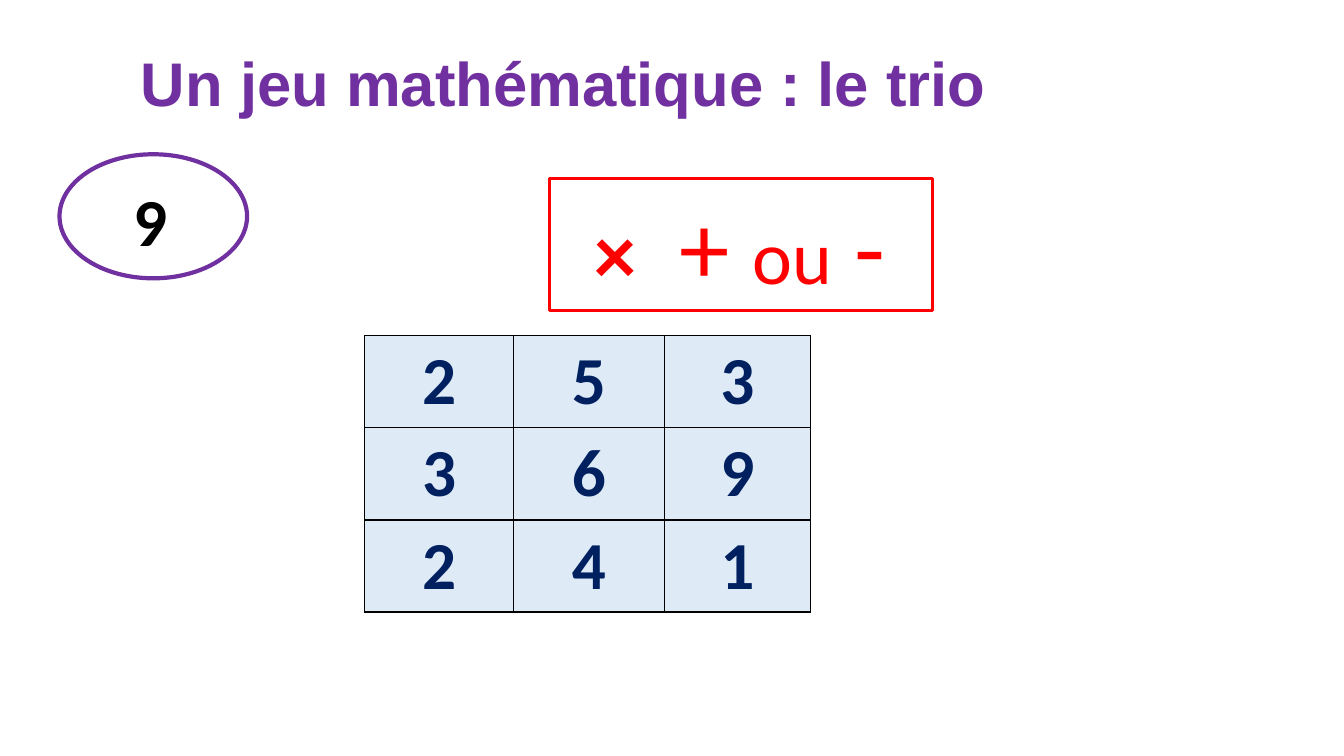
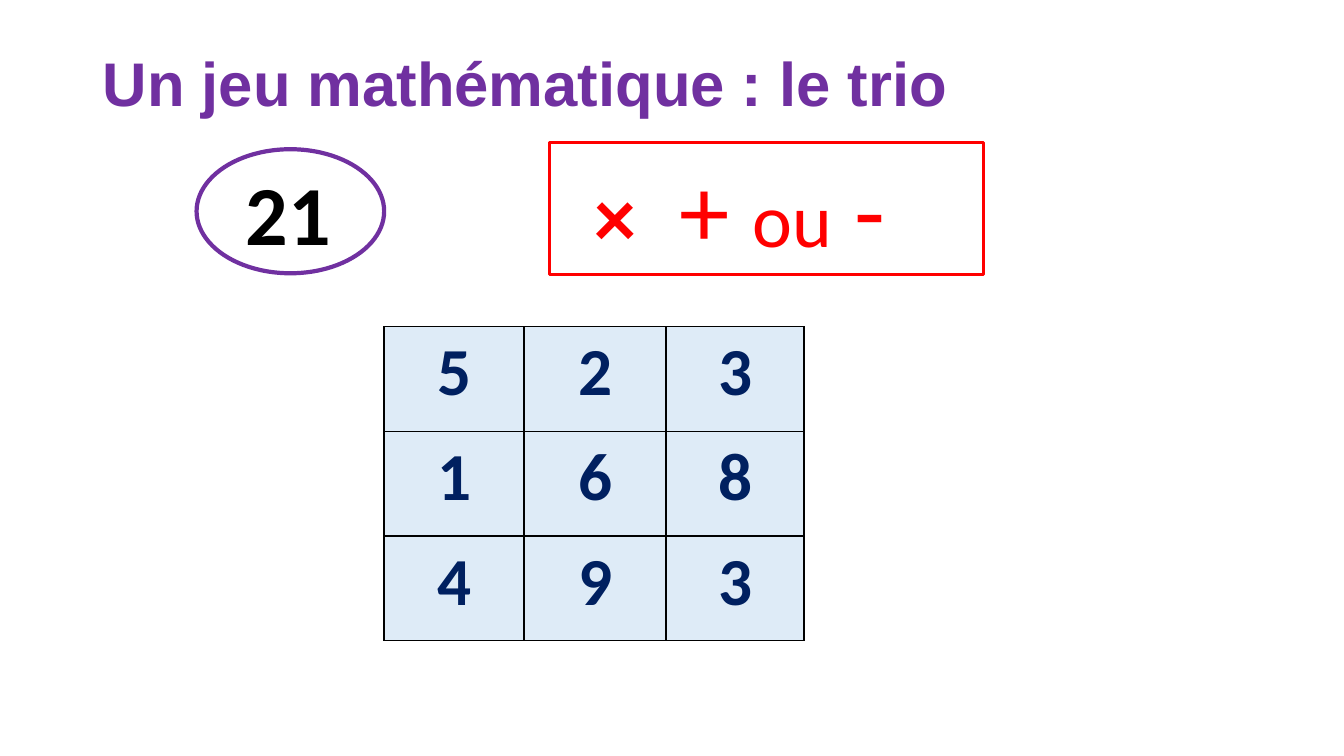
from lxml import etree
from pptx import Presentation
from pptx.dml.color import RGBColor
from pptx.enum.shapes import MSO_SHAPE
from pptx.enum.text import MSO_ANCHOR, MSO_AUTO_SIZE, PP_ALIGN
from pptx.oxml import parse_xml
from pptx.oxml.ns import qn
from pptx.util import Pt

OVAL, BOX = MSO_SHAPE.OVAL, MSO_SHAPE.RECTANGLE
CENTER, LEFT = PP_ALIGN.CENTER, PP_ALIGN.LEFT
TOP, MIDDLE = MSO_ANCHOR.TOP, MSO_ANCHOR.MIDDLE
GROW = MSO_AUTO_SIZE.SHAPE_TO_FIT_TEXT

PURPLE, RED, NAVY = "7030A0", "FF0000", "002060"
PALE_BLUE, BLACK, WHITE = "DEEBF7", "000000", "FFFFFF"

TITLE = "Un jeu mathématique : le trio"
OPERATORS = [("×", 60, True), ("\t+ ", 72, False), ("ou", 54, False), (" -", 72, False)]
BORDER = ('<a:{side} xmlns:a="http://schemas.openxmlformats.org/drawingml/2006/main" w="12700">'
          '<a:solidFill><a:srgbClr val="{color}"/></a:solidFill></a:{side}>')

# Positions are (left, top) or (left, top, width, height), in points
GAMES = [
    dict(title_left=93.6, target="9", target_size=48,
         oval=(42.5, 110.2), target_at=(88, 124.6, 90, 65.5),
         operators_at=(392.4, 127.4, 273.6, 94.3),
         grid_at=(260.6, 239.8), columns=(106, 108, 104.4), row=65.8,
         numbers=("253", "369", "241")),
    dict(title_left=66.2, target="21", target_size=60,
         oval=(140.4, 106.6), target_at=(168.4, 111.6, 110, 80),
         operators_at=(392.4, 101.5, 310.3, 94.3),
         grid_at=(274.3, 233.3), columns=(100, 101.5, 98.6), row=74.8,
         numbers=("523", "168", "493")),
]


def rgb(value):
    return RGBColor.from_string(value)


def write(frame, text, size, color, font="Calibri", bold=True, align=LEFT, anchor=TOP):
    """Append a formatted run to the first paragraph of a text frame."""
    frame.vertical_anchor = anchor
    paragraph = frame.paragraphs[0]
    paragraph.alignment = align
    run = paragraph.add_run()
    run.text = text
    run.font.size, run.font.name, run.font.bold = Pt(size), font, bold
    run.font.color.rgb = rgb(color)
    return paragraph


prs = Presentation()
prs.slide_width, prs.slide_height = Pt(960), Pt(540)

for game in GAMES:
    slide = prs.slides.add_slide(prs.slide_layouts[6])
    shapes = slide.shapes

    # Title
    title = shapes.add_textbox(Pt(game["title_left"]), Pt(9.4), Pt(828), Pt(104.4)).text_frame
    title.word_wrap = True
    write(title, TITLE, 44, PURPLE, font="Arial", anchor=MIDDLE).line_spacing = 0.9

    # Number grid
    columns, numbers = game["columns"], game["numbers"]
    left, top = game["grid_at"]
    grid = shapes.add_table(len(numbers), len(columns), Pt(left), Pt(top),
                            Pt(sum(columns)), Pt(game["row"] * len(numbers))).table
    for column, width in zip(grid.columns, columns):
        column.width = Pt(width)
    for row, digits in zip(grid.rows, numbers):
        row.height = Pt(game["row"])
        for cell, digit in zip(row.cells, digits):
            write(cell.text_frame, digit, 48, NAVY, align=CENTER)
            cell.fill.solid()
            cell.fill.fore_color.rgb = rgb(PALE_BLUE)
            properties = cell._tc.get_or_add_tcPr()
            for index, side in enumerate(("lnL", "lnR", "lnT", "lnB")):
                properties.insert(index, parse_xml(BORDER.format(side=side, color=BLACK)))

    # Target number in its oval
    left, top = game["oval"]
    oval = shapes.add_shape(OVAL, Pt(left), Pt(top), Pt(134), Pt(88.6))
    oval.shadow.inherit = False
    oval.fill.solid()
    oval.fill.fore_color.rgb = rgb(WHITE)
    oval.line.color.rgb, oval.line.width = rgb(PURPLE), Pt(3)
    target = shapes.add_textbox(*map(Pt, game["target_at"])).text_frame
    target.word_wrap = True
    write(target, game["target"], game["target_size"], BLACK)

    # Allowed operators
    operators = shapes.add_shape(BOX, *map(Pt, game["operators_at"]))
    operators.shadow.inherit = False
    operators.fill.background()
    operators.line.color.rgb, operators.line.width = rgb(RED), Pt(2)
    frame = operators.text_frame
    frame.word_wrap, frame.auto_size, frame.margin_left = True, GROW, Pt(32)
    for symbol, size, bold in OPERATORS:
        paragraph = write(frame, symbol, size, RED, bold=bold)
    stops = etree.SubElement(paragraph._p.get_or_add_pPr(), qn("a:tabLst"))
    etree.SubElement(stops, qn("a:tab"), pos=str(Pt(61)), algn="l")

prs.save("out.pptx")
